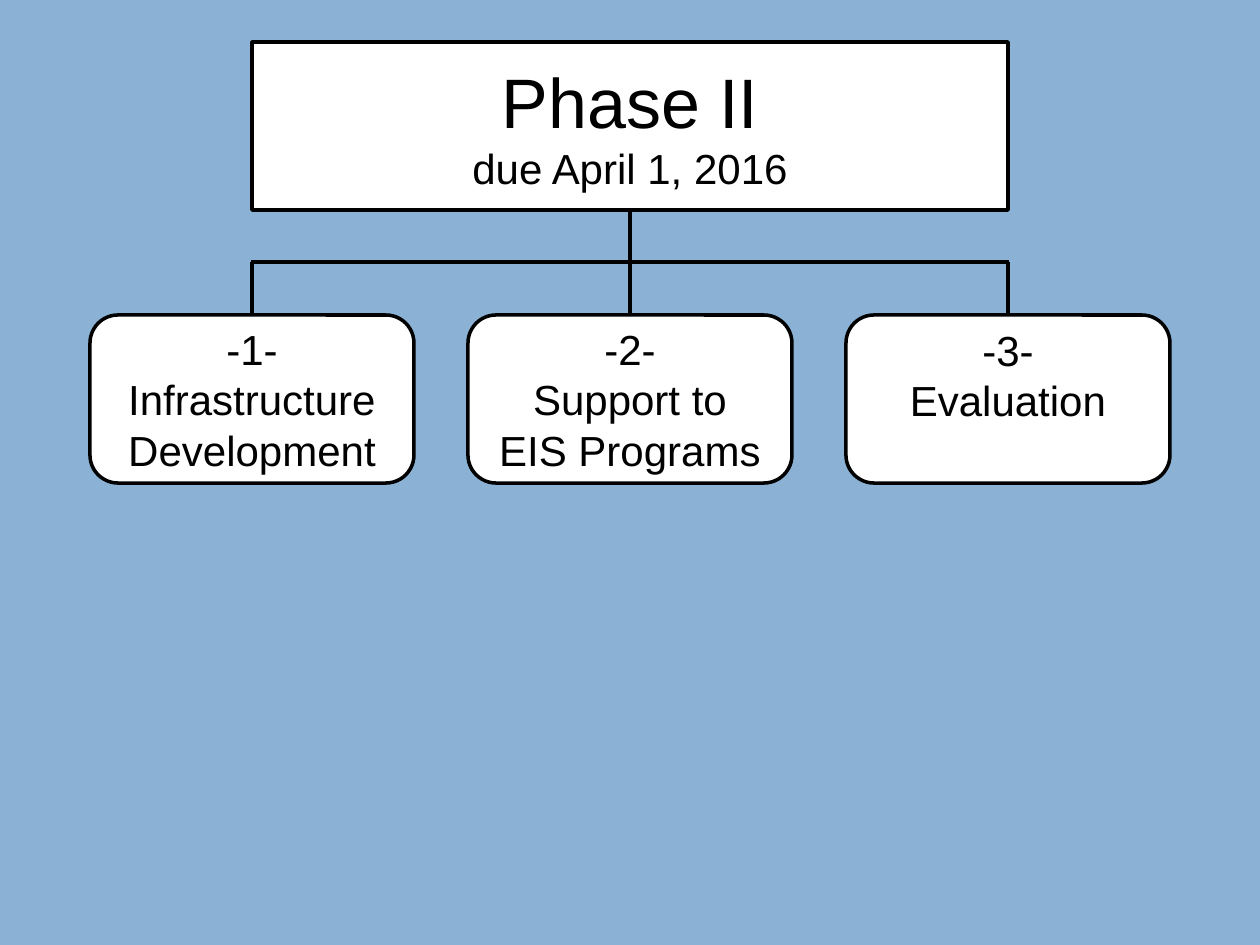
"""Build the Phase II organisation chart slide."""
from dataclasses import dataclass

from lxml.etree import SubElement
from pptx import Presentation
from pptx.dml.color import RGBColor
from pptx.enum.shapes import MSO_CONNECTOR, MSO_SHAPE
from pptx.enum.text import MSO_ANCHOR, MSO_AUTO_SIZE, PP_ALIGN
from pptx.oxml import parse_xml
from pptx.oxml.ns import nsdecls, qn
from pptx.util import Emu, Pt

PX = 914400 // 126
BLUE = RGBColor(0x8B, 0xB2, 0xD5)
WHITE = RGBColor(0xFF, 0xFF, 0xFF)
BLACK = RGBColor(0, 0, 0)
TALL, WIDE, STEP, MID = 168, 324, 378, 630
HEAD, BAR, ROW = 42, 262, 315
INSET, LINE = 6, 48


@dataclass
class Box:
    """A centred box whose lines may leave free rows at the foot."""
    mid: int
    top: int
    wide: int
    lines: list[str]
    sizes: list[int]
    free: int = 0


def px(num: int) -> Emu:
    """Turn pixels into EMU."""
    return Emu(num * PX)


def put(item, form: dict) -> None:
    """Set each attribute of the item from the dict."""
    for key, val in form.items():
        setattr(item, key, val)


def style(shape, box: Box) -> None:
    """Fill, outline and letter a shape as the box says."""
    shape.fill.solid()
    shape.fill.fore_color.rgb = WHITE
    shape.line.color.rgb = BLACK
    shape.line.width = Pt(2)
    frame = shape.text_frame
    put(frame, dict(word_wrap=True, auto_size=MSO_AUTO_SIZE.NONE,
                    vertical_anchor=MSO_ANCHOR.MIDDLE, margin_top=px(INSET),
                    margin_bottom=px(INSET + LINE * box.free)))
    for num, (text, size) in enumerate(zip(box.lines, box.sizes)):
        para = frame.add_paragraph() if num else frame.paragraphs[0]
        para.alignment = PP_ALIGN.CENTER
        run = para.add_run()
        run.text = text
        put(run.font, dict(name="Arial", size=Pt(size)))
        run.font.color.rgb = BLACK


def place(box: Box) -> dict:
    """Give the position and size of a box."""
    return dict(left=px(box.mid - box.wide // 2), top=px(box.top),
                width=px(box.wide), height=px(TALL))


def title(slide, box: Box) -> None:
    """Turn the title placeholder into the rounded head box."""
    shape = slide.shapes.title
    put(shape, place(box))
    shape._element.spPr.append(parse_xml(
        f'<a:prstGeom {nsdecls("a")} prst="roundRect"><a:avLst/></a:prstGeom>'))
    style(shape, box)


def child(slide, box: Box) -> None:
    """Draw one rounded box of the lower row."""
    shape = slide.shapes.add_shape(MSO_SHAPE.ROUNDED_RECTANGLE, **place(box))
    shape.shadow.inherit = False
    style(shape, box)


def link(slide, x1: int, y1: int, x2: int, y2: int) -> None:
    """Draw a straight black line without shadow."""
    line = slide.shapes.add_connector(
        MSO_CONNECTOR.STRAIGHT, px(x1), px(y1), px(x2), px(y2))
    line.line.color.rgb = BLACK
    line.line.width = Pt(2.25)
    SubElement(line._element.spPr, qn("a:effectLst"))


def main() -> None:
    """Draw the slide and save it."""
    deck = Presentation()
    put(deck, dict(slide_width=px(1260), slide_height=px(945)))
    slide = deck.slides.add_slide(deck.slide_layouts[5])
    slide.background.fill.solid()
    slide.background.fill.fore_color.rgb = BLUE
    title(slide, Box(MID, HEAD, 2 * STEP,
                     ["Phase II", "due April 1, 2016"], [40, 24]))
    tasks = [["Infrastructure", "Development"],
             ["Support to", "EIS Programs"], ["Evaluation"]]
    for num, task in enumerate(tasks):
        mid = MID + (num - 1) * STEP
        link(slide, mid, HEAD + TALL if mid == MID else BAR, mid, ROW)
        child(slide, Box(mid, ROW, WIDE, [f"-{num + 1}-", *task],
                         [24] * 3, 2 - len(task)))
    link(slide, MID - STEP - 1, BAR, MID + STEP + 1, BAR)
    deck.save("out.pptx")


if __name__ == "__main__":
    main()
